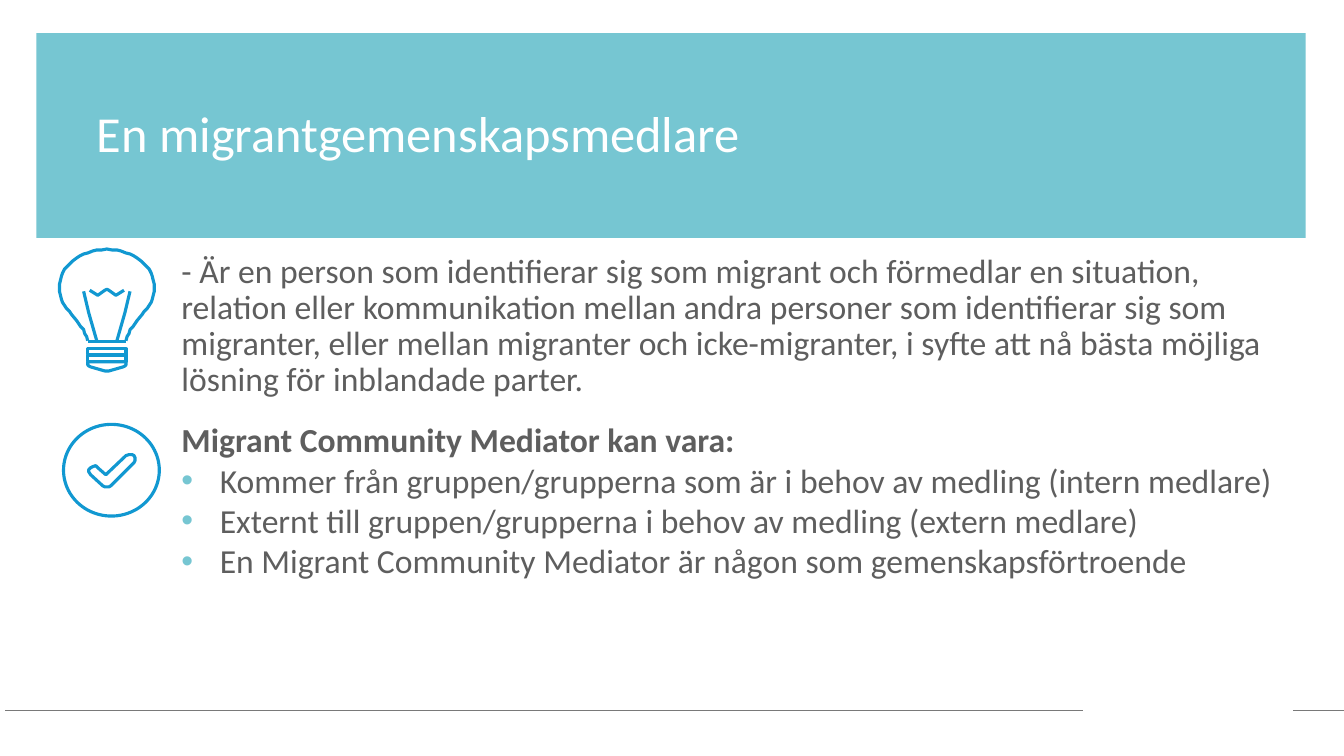
from dataclasses import dataclass

from lxml.etree import SubElement
from pptx import Presentation
from pptx.dml.color import RGBColor
from pptx.enum.shapes import MSO_CONNECTOR, MSO_SHAPE
from pptx.enum.text import MSO_ANCHOR, MSO_AUTO_SIZE, PP_ALIGN
from pptx.oxml.ns import qn
from pptx.util import Inches, Pt

COLORS = {
    "band": "76C6D2",
    "title": "FFFFFF",
    "text": "5E5E5E",
    "icon": "1198D1",
    "rule": "797979",
}
FONT = "Calibri"
ICON_WIDTH = 2.25
BULB_CENTER = 1.06
TWO_CONTENT_LAYOUT = 3

Point = tuple[float, float]


@dataclass(frozen=True)
class Box:
    left: float
    top: float
    width: float
    height: float

    def lengths(self) -> list[int]:
        return [Inches(v) for v in (self.left, self.top, self.width, self.height)]


@dataclass(frozen=True)
class Line:
    start: Point
    end: Point
    color: str
    width: float


@dataclass(frozen=True)
class TextLine:
    text: str
    size: int = 24
    color: str = "text"
    bold: bool = False
    bullet: bool = False
    spacing: float = 1.0


@dataclass(frozen=True)
class Outline:
    points: list[Point]
    closed: bool = False


def mirrored(points: list[Point]) -> list[Point]:
    """Reflect points across the bulb's vertical axis, in reverse order."""
    return [(2 * BULB_CENTER - x, y) for x, y in reversed(points)]


BAND = Box(0.36, 0.33, 12.59, 2.03)
CHECK_CIRCLE = Box(0.63, 4.21, 0.95, 0.91)
BULB_RINGS = [Box(0.87, top, 0.38, 0.06) for top in (3.46, 3.53)]
LINES = [
    Line((10.74, 7.05), (0.05, 7.05), "rule", 0.5),
    Line((13.33, 7.05), (12.82, 7.05), "rule", 0.5),
    Line((0.87, 3.39), (1.25, 3.39), "icon", ICON_WIDTH),
]

GLASS_LEFT = [
    (0.87, 3.38), (0.86, 3.34), (0.84, 3.31), (0.83, 3.27), (0.8, 3.24),
    (0.78, 3.21), (0.76, 3.18), (0.71, 3.12), (0.69, 3.09), (0.66, 3.06),
    (0.64, 3.03), (0.62, 3.0), (0.61, 2.97), (0.6, 2.93), (0.59, 2.89),
    (0.59, 2.82), (0.6, 2.78), (0.61, 2.74), (0.62, 2.71), (0.64, 2.67),
    (0.67, 2.64), (0.7, 2.61), (0.72, 2.59), (0.76, 2.56), (0.79, 2.54),
    (0.83, 2.52), (0.87, 2.51), (0.92, 2.49), (0.96, 2.48), (1.01, 2.48),
    (1.06, 2.47),
]
CAP_LEFT = [
    (0.87, 3.59), (0.87, 3.62), (0.88, 3.63), (0.9, 3.64), (1.04, 3.68),
]
STEM_LEFT = [(0.83, 2.89), (0.88, 3.1), (0.96, 3.38)]
FILAMENT_LEFT = [(0.89, 2.88), (0.97, 2.93), (1.04, 2.88), (1.06, 2.87)]
CHECK_MARK = [
    (1.06, 4.83), (1.08, 4.83), (1.1, 4.82), (1.33, 4.59), (1.34, 4.57),
    (1.34, 4.54), (1.33, 4.52), (1.31, 4.51), (1.28, 4.51), (1.25, 4.52),
    (1.05, 4.71), (0.97, 4.64), (0.95, 4.62), (0.92, 4.63), (0.9, 4.64),
    (0.88, 4.66), (0.88, 4.68), (0.9, 4.71), (1.02, 4.82), (1.04, 4.83),
]
OUTLINES = [
    Outline(CAP_LEFT + mirrored(CAP_LEFT), closed=True),
    Outline(STEM_LEFT),
    Outline(GLASS_LEFT + mirrored(GLASS_LEFT)),
    Outline(mirrored(STEM_LEFT)),
    Outline(FILAMENT_LEFT + mirrored(FILAMENT_LEFT)),
    Outline(CHECK_MARK, closed=True),
]

TITLE = [TextLine("En migrantgemenskapsmedlare", 36, "title", spacing=0.9)]
DEFINITION = [TextLine(
    "- Är en person som identifierar sig som migrant och förmedlar en situation, "
    "relation eller kommunikation mellan andra personer som identifierar sig som "
    "migranter, eller mellan migranter och icke-migranter, i syfte att nå bästa "
    "möjliga lösning för inblandade parter.",
    spacing=0.9,
)]
MEDIATOR_KINDS = [
    TextLine("Migrant Community Mediator kan vara:", bold=True),
    TextLine("Kommer från gruppen/grupperna som är i behov av medling "
             "(intern medlare)", bullet=True),
    TextLine("Externt till gruppen/grupperna i behov av medling "
             "(extern medlare)", bullet=True),
    TextLine("En Migrant Community Mediator är någon som gemenskapsförtroende",
             bullet=True),
]


def color(name: str) -> RGBColor:
    return RGBColor.from_string(COLORS[name])


def style_icon(shape) -> None:
    shape.shadow.inherit = False
    shape.fill.background()
    shape.line.color.rgb = color("icon")
    shape.line.width = Pt(ICON_WIDTH)


def add_band(slide) -> None:
    """Add the title band behind all other elements."""
    band = slide.shapes.add_shape(MSO_SHAPE.RECTANGLE, *BAND.lengths())
    band.shadow.inherit = False
    band.fill.solid()
    band.fill.fore_color.rgb = color("band")
    band.line.fill.background()
    band.element.getparent().insert(2, band.element)


def add_line(slide, line: Line) -> None:
    ends = [Inches(v) for v in (*line.start, *line.end)]
    connector = slide.shapes.add_connector(MSO_CONNECTOR.STRAIGHT, *ends)
    connector.line.color.rgb = color(line.color)
    connector.line.width = Pt(line.width)
    SubElement(connector.element.spPr, qn("a:effectLst"))


def add_icon_shape(slide, preset: MSO_SHAPE, box: Box) -> None:
    style_icon(slide.shapes.add_shape(preset, *box.lengths()))


def add_outline(slide, outline: Outline) -> None:
    first, *others = [(Inches(x), Inches(y)) for x, y in outline.points]
    builder = slide.shapes.build_freeform(*first)
    builder.add_line_segments(others, close=outline.closed)
    style_icon(builder.convert_to_shape())


def set_bullet(paragraph, bullet: bool) -> None:
    properties = paragraph._p.get_or_add_pPr()
    indent = Inches(0.38) if bullet else 0
    properties.set("marL", str(indent))
    properties.set("indent", str(-indent))
    if bullet:
        bullet_color = SubElement(properties, qn("a:buClr"))
        SubElement(bullet_color, qn("a:srgbClr"), val=COLORS["band"])
        SubElement(properties, qn("a:buFont"), typeface="Arial")
        SubElement(properties, qn("a:buChar"), char="•")
    else:
        SubElement(properties, qn("a:buNone"))


def fill_placeholder(shape, box: Box, lines: list[TextLine]) -> None:
    shape.left, shape.top, shape.width, shape.height = box.lengths()
    frame = shape.text_frame
    frame.word_wrap = True
    frame.auto_size = MSO_AUTO_SIZE.NONE
    frame.vertical_anchor = MSO_ANCHOR.TOP
    for index, line in enumerate(lines):
        paragraph = frame.add_paragraph() if index else frame.paragraphs[0]
        paragraph.text = line.text
        set_bullet(paragraph, line.bullet)
        paragraph.alignment = PP_ALIGN.LEFT
        paragraph.line_spacing = line.spacing
        paragraph.space_before = Pt(0)
        paragraph.font.name = FONT
        paragraph.font.size = Pt(line.size)
        paragraph.font.bold = line.bold
        paragraph.font.color.rgb = color(line.color)


def main() -> None:
    presentation = Presentation()
    presentation.slide_width = Inches(13.33)
    presentation.slide_height = Inches(7.5)
    layout = presentation.slide_layouts[TWO_CONTENT_LAYOUT]
    slide = presentation.slides.add_slide(layout)
    title, definition, kinds = list(slide.placeholders)[:3]
    fill_placeholder(title, Box(0.86, 1.03, 11.55, 0.76), TITLE)
    fill_placeholder(definition, Box(1.7, 2.47, 11.21, 1.6), DEFINITION)
    fill_placeholder(kinds, Box(1.7, 4.11, 11.21, 2.12), MEDIATOR_KINDS)
    add_band(slide)
    for line in LINES:
        add_line(slide, line)
    for ring in BULB_RINGS:
        add_icon_shape(slide, MSO_SHAPE.RECTANGLE, ring)
    add_icon_shape(slide, MSO_SHAPE.OVAL, CHECK_CIRCLE)
    for outline in OUTLINES:
        add_outline(slide, outline)
    presentation.save("out.pptx")


if __name__ == "__main__":
    main()
